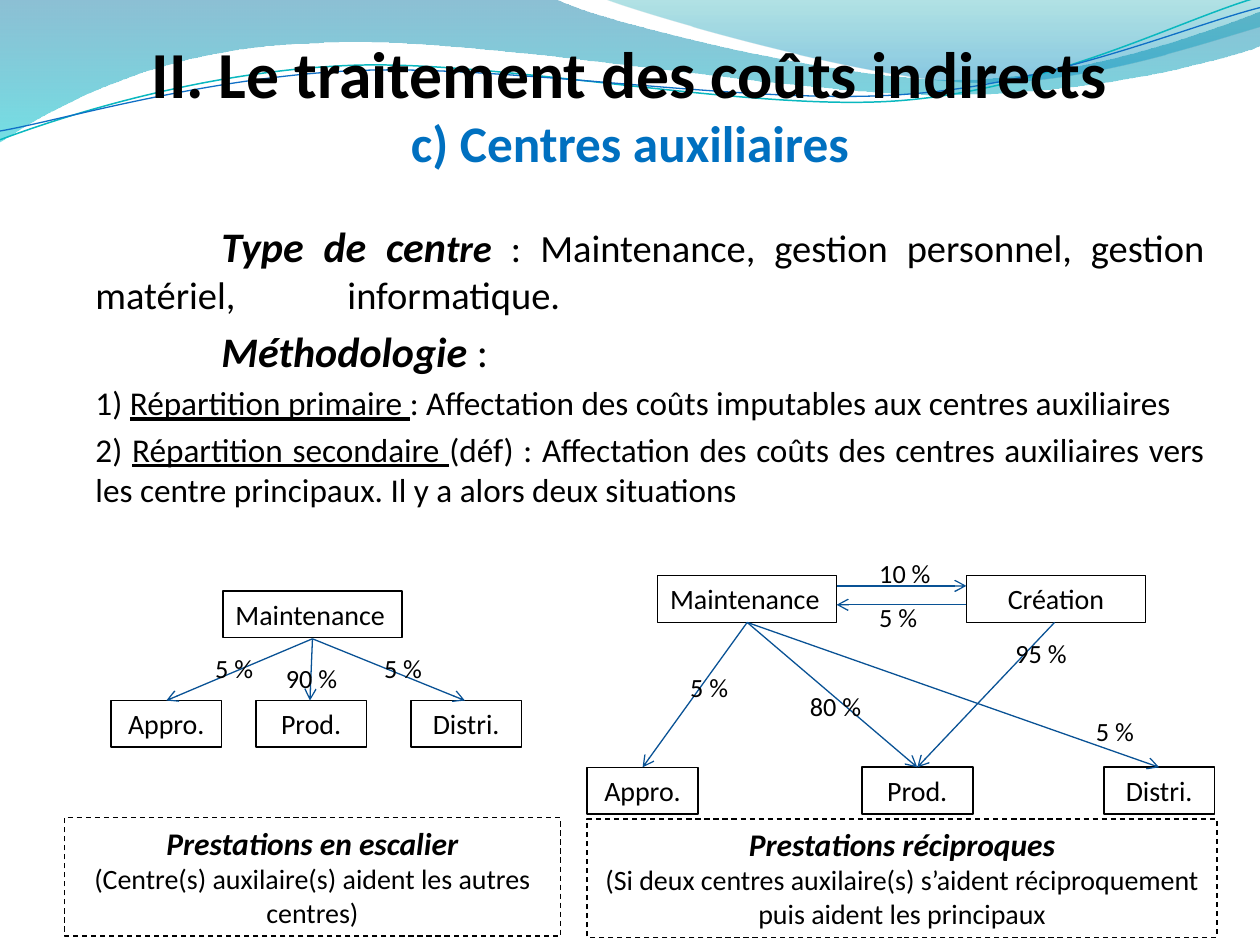
from dataclasses import dataclass
from math import cos, radians, sin
from typing import NamedTuple

from lxml.etree import SubElement
from pptx import Presentation
from pptx.dml.color import RGBColor
from pptx.enum.dml import MSO_LINE_DASH_STYLE as Dash
from pptx.enum.shapes import MSO_CONNECTOR as Connector, MSO_SHAPE as Preset
from pptx.enum.text import MSO_ANCHOR as Anchor, MSO_AUTO_SIZE as AutoSize, PP_ALIGN as Align
from pptx.oxml.ns import qn
from pptx.util import Inches, Pt


@dataclass(frozen=True)
class Theme:
    font: str = "Calibri"
    ink: str = "000000"
    paper: str = "FFFFFF"
    accent: str = "0070C0"
    arrow: str = "095295"
    title: float = 37.5
    subtitle: float = 29.25
    lead: float = 24
    body: float = 22
    step: float = 19
    caption: float = 18
    node: float = 16
    label: float = 15


THEME = Theme()


class Span(NamedTuple):
    text: str
    size: float
    bold: bool = False
    italic: bool = False
    underline: bool = False
    color: str = THEME.ink


class Node(NamedTuple):
    text: str
    left: float
    top: float
    width: float = 0.88
    line: float = 1
    filled: bool = False
    align: Align = Align.CENTER


class Arrow(NamedTuple):
    x1: float
    y1: float
    x2: float
    y2: float


class Label(NamedTuple):
    text: str
    left: float
    top: float


class Caption(NamedTuple):
    left: float
    top: float
    width: float
    heading: str
    detail: str


class Diagram(NamedTuple):
    nodes: list
    arrows: list
    labels: list
    caption: Caption


class Stop(NamedTuple):
    position: int
    color: str
    opacity: int


class Wave(NamedTuple):
    frame: tuple  # left, top, width, height
    start: tuple
    curves: list  # six numbers for a curve, two for a straight line
    stops: tuple = ()
    color: str = ""
    weight: float = 0
    turn: float = 0


# Header waves
WAVES = [
    Wave((-0.01, -0.01, 10.02, 1.14), (0, 0),
         [(4.4, -0.01), (4.76, 0.17, 6.64, 0.63, 7.58, 0.63),
          (8.53, 0.63, 9.58, 0.26, 10, 0.09), (10.01, 0.36),
          (9.83, 0.44, 8.7, 0.76, 7.46, 0.75), (6.22, 0.75, 3.82, 0.28, 2.57, 0.34),
          (1.29, 0.36, 0.46, 0.83, -0.01, 1.13), (0, 0)],
         stops=(Stop(0, "0074A1", 45), Stop(100, "00C6CF", 55))),
    Wave((4.79, -0.01, 5.21, 0.7), (4.79, -0.01),
         [(5.09, 0.11, 6.82, 0.62, 7.69, 0.65), (8.56, 0.69, 9.61, 0.32, 10, 0.21),
          (10, 0), (4.79, -0.01)],
         stops=(Stop(0, "00A1A9", 30), Stop(80, "008BBF", 45))),
    Wave((-0.02, 0.22, 10.02, 0.71), (0, 1.11),
         [(0.48, 0.93, 1.58, 0.57, 2.77, 0.52), (3.95, 0.47, 5.93, 0.89, 7.13, 0.8),
          (8.33, 0.71, 9.38, 0.15, 9.98, -0.02)], color="0AB8BF", weight=0.85, turn=-2.7),
    Wave((-0.02, 0.3, 10.03, 0.58), (0, 1.04),
         [(0.47, 0.96, 1.64, 0.61, 2.83, 0.56), (4.03, 0.51, 5.97, 0.84, 7.17, 0.75),
          (8.36, 0.67, 9.41, 0.21, 10, 0.06)], color="0F6FC6", weight=0.75, turn=-2.7),
]


def add_wave(page, wave: Wave) -> None:
    left, top, width, height = wave.frame
    mid_x, mid_y = left + width / 2, top + height / 2
    cosine, sine = cos(radians(wave.turn)), sin(radians(wave.turn))

    def add_points(parent, numbers: tuple) -> None:
        """Write slide points in the frame's own, unturned coordinates."""
        for x, y in zip(numbers[::2], numbers[1::2]):
            dx, dy = x - mid_x, y - mid_y
            SubElement(parent, qn("a:pt"),
                       x=str(Inches(dx * cosine + dy * sine + width / 2)),
                       y=str(Inches(dy * cosine - dx * sine + height / 2)))

    builder = page.shapes.build_freeform(Inches(left), Inches(top))
    builder.add_line_segments([(Inches(left + width), Inches(top + height))], close=False)
    shape = builder.convert_to_shape()
    shape.shadow.inherit = False
    shape.rotation = wave.turn
    outline = next(shape._element.iter(qn("a:path")))
    for old in list(outline):
        outline.remove(old)
    add_points(SubElement(outline, qn("a:moveTo")), wave.start)
    for curve in wave.curves:
        tag = "a:lnTo" if len(curve) == 2 else "a:cubicBezTo"
        add_points(SubElement(outline, qn(tag)), curve)
    if not wave.stops:
        shape.fill.background()
        shape.line.color.rgb = RGBColor.from_string(wave.color)
        shape.line.width = Pt(wave.weight)
        return
    SubElement(outline, qn("a:close"))
    shape.line.fill.background()
    shape.fill.gradient()
    gradient = shape.fill._xPr.find(qn("a:gradFill"))
    stop_list = gradient.find(qn("a:gsLst"))
    for old in list(stop_list):
        stop_list.remove(old)
    for stop in wave.stops:
        mark = SubElement(stop_list, qn("a:gs"), pos=str(stop.position * 1000))
        color = SubElement(mark, qn("a:srgbClr"), val=stop.color)
        SubElement(color, qn("a:alpha"), val=str(stop.opacity * 1000))
    gradient.find(qn("a:lin")).set("ang", "5400000")


def write(box, paragraphs: list, align: Align, before: float = 0, tabs: tuple = (),
          grow: bool = True) -> None:
    frame = box.text_frame
    frame.word_wrap = True
    frame.vertical_anchor = Anchor.TOP
    frame.auto_size = AutoSize.SHAPE_TO_FIT_TEXT if grow else AutoSize.NONE
    for index, spans in enumerate(paragraphs):
        para = frame.add_paragraph() if index else frame.paragraphs[0]
        para.alignment = align
        if before:
            para.space_before = Pt(before * spans[0].size)
        if tabs:
            tab_list = SubElement(para._p.get_or_add_pPr(), qn("a:tabLst"))
            for tab in tabs:
                SubElement(tab_list, qn("a:tab"), pos=str(Inches(tab)), algn="l")
        for span in spans:
            run = para.add_run()
            run.text = span.text
            font = run.font
            font.name, font.size = THEME.font, Pt(span.size)
            font.bold, font.italic, font.underline = span.bold, span.italic, span.underline
            font.color.rgb = RGBColor.from_string(span.color)


def add_text(page, left, top, width, height, paragraphs, align, **options) -> None:
    box = page.shapes.add_textbox(Inches(left), Inches(top), Inches(width), Inches(height))
    write(box, paragraphs, align, **options)


def add_frame(page, left, top, width, height, line=0.75, filled=False):
    shape = page.shapes.add_shape(Preset.RECTANGLE, Inches(left), Inches(top),
                                  Inches(width), Inches(height))
    shape.shadow.inherit = False
    if filled:
        shape.fill.solid()
        shape.fill.fore_color.rgb = RGBColor.from_string(THEME.paper)
    else:
        shape.fill.background()
    shape.line.color.rgb = RGBColor.from_string(THEME.ink)
    shape.line.width = Pt(line)
    return shape


def add_arrow(page, arrow: Arrow) -> None:
    line = page.shapes.add_connector(Connector.STRAIGHT, *(Inches(v) for v in arrow))
    line.line.color.rgb = RGBColor.from_string(THEME.arrow)
    line.line.width = Pt(0.75)
    SubElement(line.line._get_or_add_ln(), qn("a:tailEnd"), type="arrow")
    SubElement(line._element.spPr, qn("a:effectLst"))


def add_diagram(page, diagram: Diagram) -> None:
    for node in diagram.nodes:
        box = add_frame(page, node.left, node.top, node.width, 0.37, node.line, node.filled)
        write(box, [[Span(node.text, THEME.node)]], node.align)
    for arrow in diagram.arrows:
        add_arrow(page, arrow)
    for text, left, top in diagram.labels:
        add_text(page, left, top, 0.63, 0.35, [[Span(text, THEME.label)]], Align.LEFT)
    left, top, width, heading, detail = diagram.caption
    box = add_frame(page, left, top, width, 0.94)
    box.line.dash_style = Dash.DASH
    write(box, [[Span(heading, THEME.caption, True, True)], [Span(detail, THEME.node)]],
          Align.CENTER)


def centres(top: float, lefts: tuple) -> list:
    return [Node(name, left, top, line=line) for name, left, line
            in zip(("Appro.", "Prod.", "Distri."), lefts, (0.75, 1, 1))]


def helper(text: str, left: float, top: float, align: Align = Align.LEFT) -> Node:
    return Node(text, left, top, 1.42, 0.75, True, align)


# Slide contents
STAIRCASE = Diagram(
    [helper("Maintenance", 1.77, 4.69), *centres(5.56, (0.88, 2.03, 3.26))],
    [Arrow(2.48, 5.07, x, 5.56) for x in (2.46, 3.69, 1.32)],
    [Label("5 %", 1.61, 5.13), Label("5 %", 2.95, 5.13), Label("90 %", 2.17, 5.21)],
    Caption(0.51, 6.49, 3.94, "Prestations en escalier",
            "(Centre(s) auxilaire(s) aident les autres centres)"))
RECIPROCAL = Diagram(
    [helper("Maintenance", 5.22, 4.57), helper("Création", 7.67, 4.57, Align.CENTER),
     *centres(6.09, (4.66, 6.84, 8.76))],
    [Arrow(6.64, 4.65, 7.67, 4.65), Arrow(7.67, 4.8, 6.64, 4.8),
     *(Arrow(5.93, 4.94, x, 6.09) for x in (5.1, 9.2, 7.28)), Arrow(8.37, 4.94, 7.28, 6.09)],
    [Label("10 %", 6.88, 4.37), Label("5 %", 5.38, 5.28), Label("5 %", 6.88, 4.72),
     Label("80 %", 6.33, 5.43), Label("5 %", 8.6, 5.63), Label("95 %", 7.96, 5.01)],
    Caption(4.66, 6.5, 5, "Prestations réciproques",
            "(Si deux centres auxilaire(s) s’aident réciproquement puis aident les principaux"))
BODY = [
    [Span("\tType de cen", THEME.lead, True, True), Span("tre ", THEME.body, True, True),
     Span(": Maintenance, gestion personnel, gestion matériel, \tinformatique.", THEME.body)],
    [Span("\tMéthodologie", THEME.lead, True, True), Span(" :", THEME.lead)],
    [Span("1) ", THEME.step), Span("Répartition primaire ", THEME.step, underline=True),
     Span(": Affectation des coûts imputables aux centres auxiliaires", THEME.step)],
    [Span("2) ", THEME.step), Span("Répartition secondaire ", THEME.step, underline=True),
     Span("(déf) : Affectation des coûts des centres auxiliaires vers les centre principaux. "
          "Il y a alors deux situations", THEME.step)]]
TITLE = [[Span("II. Le traitement des coûts indirects", THEME.title, True)],
         [Span("c) Centres auxiliaires", THEME.subtitle, True, color=THEME.accent)]]

deck = Presentation()
deck.slide_width, deck.slide_height = Inches(10), Inches(7.5)
page = deck.slides.add_slide(deck.slide_layouts[6])
for wave in WAVES:
    add_wave(page, wave)
add_text(page, 0.66, 1.7, 9, 2.76, BODY, Align.JUSTIFY, before=0.2, tabs=(1, 2), grow=False)
for diagram in (STAIRCASE, RECIPROCAL):
    add_diagram(page, diagram)
add_text(page, 0.5, 0.21, 9, 1.01, TITLE, Align.CENTER, grow=False)
deck.save("out.pptx")
